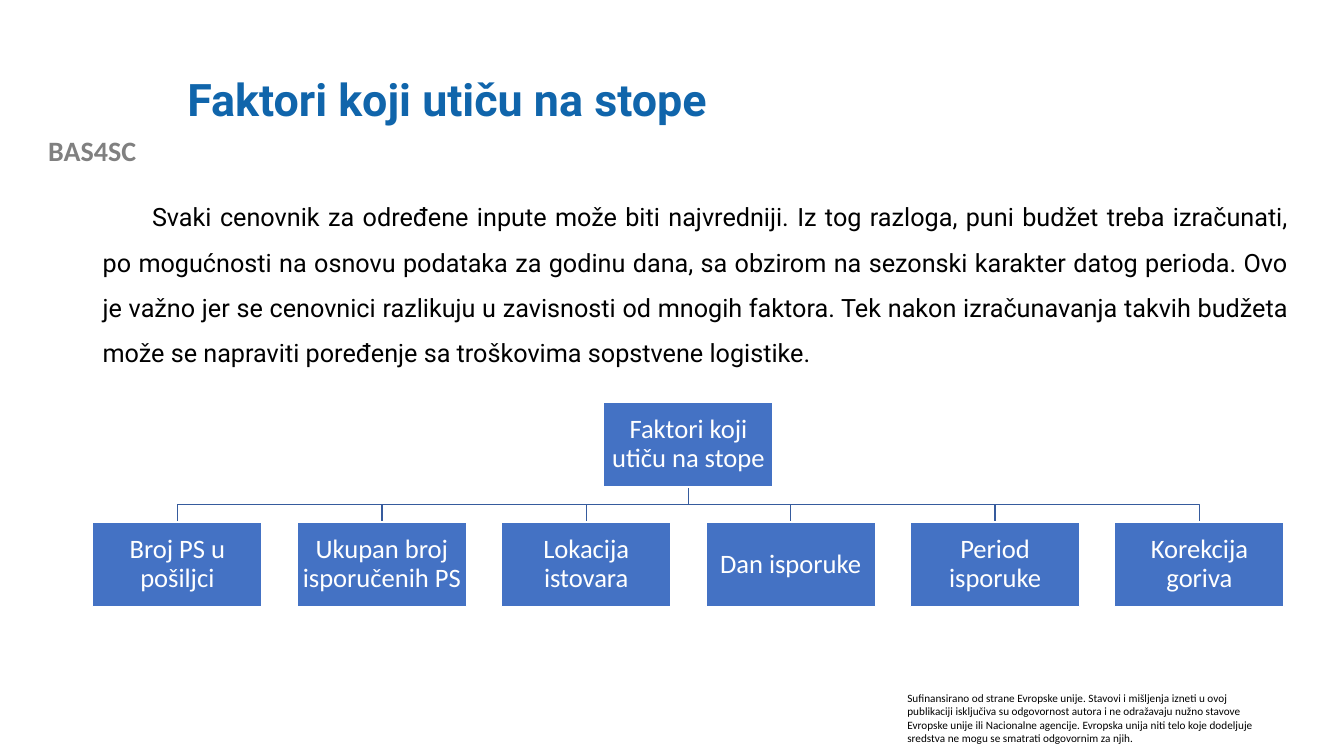
from pptx import Presentation
from pptx import util as u
from pptx.dml.color import RGBColor
from pptx.enum import shapes, text

SLIDE_WIDTH, SLIDE_HEIGHT = u.Inches(13.33), u.Inches(7.5)
CHART_LEFT, CHART_TOP = 6.9, 53.2
COLUMN_STEP, ROW_STEP = 15.21, 15.87
BOX_WIDTH, BOX_HEIGHT = 12.6, 11.2

PROJECT = "BAS4SC"
TITLE = "Faktori koji utiču na stope"
EXPLANATION = (
    "Svaki cenovnik za određene inpute može biti najvredniji. Iz tog razloga, "
    "puni budžet treba izračunati, po mogućnosti na osnovu podataka za godinu dana, "
    "sa obzirom na sezonski karakter datog perioda. Ovo je važno jer se cenovnici "
    "razlikuju u zavisnosti od mnogih faktora. Tek nakon izračunavanja takvih budžeta "
    "može se napraviti poređenje sa troškovima sopstvene logistike."
)
DISCLAIMER = (
    "Sufinansirano od strane Evropske unije. Stavovi i mišljenja izneti u ovoj "
    "publikaciji isključiva su odgovornost autora i ne odražavaju nužno stavove "
    "Evropske unije ili Nacionalne agencije. Evropska unija niti telo koje dodeljuje "
    "sredstva ne mogu se smatrati odgovornim za njih."
)
FACTORS = [
    "Broj PS u pošiljci",
    "Ukupan broj isporučenih PS",
    "Lokacija istovara",
    "Dan isporuke",
    "Period isporuke",
    "Korekcija goriva",
]


def color(hex_code):
    """Turn a hex string into a colour."""
    return RGBColor.from_string(hex_code)


def across(percent):
    """Give a share of the slide's width."""
    return u.Emu(round(SLIDE_WIDTH * percent / 100))


def down(percent):
    """Give a share of the slide's height."""
    return u.Emu(round(SLIDE_HEIGHT * percent / 100))


def area(left, top, width, height):
    """Turn shares of the slide into a position and size."""
    return across(left), down(top), across(width), down(height)


def write(frame, wording, size, ink, font="Calibri", bold=False, align=text.PP_ALIGN.LEFT,
          anchor=text.MSO_ANCHOR.TOP, spacing=1.0):
    """Fill a text frame with one paragraph and return it."""
    frame.word_wrap = True
    frame.vertical_anchor = anchor
    paragraph = frame.paragraphs[0]
    paragraph.alignment = align
    paragraph.line_spacing = spacing
    run = paragraph.add_run()
    run.text = wording
    run.font.name, run.font.size, run.font.bold = font, u.Pt(size), bold
    run.font.color.rgb = color(ink)
    return paragraph


def add_label(slide, place, wording, size, ink, **style):
    """Add a text box and return its paragraph."""
    label = slide.shapes.add_textbox(*area(*place))
    return write(label.text_frame, wording, size, ink, **style)


def cell(column, row):
    """Give the left and top shares of a chart box."""
    return CHART_LEFT + column * COLUMN_STEP, CHART_TOP + row * ROW_STEP


def add_factor(slide, wording, column, row):
    """Add one box of the hierarchy."""
    box = slide.shapes.add_shape(
        shapes.MSO_SHAPE.RECTANGLE, *area(*cell(column, row), BOX_WIDTH, BOX_HEIGHT))
    box.shadow.inherit = False
    box.fill.solid()
    box.fill.fore_color.rgb = color("4472C4")
    box.line.color.rgb = color("FFFFFF")
    box.line.width = u.Pt(1)
    frame = box.text_frame
    frame.margin_left = frame.margin_right = u.Inches(0.01)
    frame.margin_top = frame.margin_bottom = u.Inches(0.01)
    write(frame, wording, 19, "FFFFFF", align=text.PP_ALIGN.CENTER,
          anchor=text.MSO_ANCHOR.MIDDLE, spacing=0.9)


def add_branch(slide, parent_column, child_column):
    """Add the elbow line from the top box to a box in the row below."""
    parent_left, parent_top = cell(parent_column, 0)
    child_left, child_top = cell(child_column, 1)
    start_x, end_x = (across(left + BOX_WIDTH / 2) for left in (parent_left, child_left))
    start_y, end_y = down(parent_top + BOX_HEIGHT), down(child_top)
    bend_y = (start_y + end_y) // 2
    builder = slide.shapes.build_freeform(start_x, start_y)
    builder.add_line_segments([(start_x, bend_y), (end_x, bend_y), (end_x, end_y)], close=False)
    branch = builder.convert_to_shape()
    branch.shadow.inherit = False
    branch.fill.background()
    branch.line.color.rgb = color("365B9D")
    branch.line.width = u.Pt(1)


def add_hierarchy(slide, root, factors):
    """Add the root box above the evenly spaced row of factors."""
    root_column = (len(factors) - 1) / 2
    for column in range(len(factors)):
        add_branch(slide, root_column, column)
    add_factor(slide, root, root_column, 0)
    for column, factor in enumerate(factors):
        add_factor(slide, factor, column, 1)


def main():
    """Build the slide and save it."""
    deck = Presentation()
    deck.slide_width, deck.slide_height = SLIDE_WIDTH, SLIDE_HEIGHT
    slide = deck.slides.add_slide(deck.slide_layouts[6])
    add_label(slide, (0, 17.07, 13.73, 5.87), PROJECT, 20, "808080",
              bold=True, align=text.PP_ALIGN.CENTER)
    add_label(slide, (66.77, 90.8, 27.76, 8.53), DISCLAIMER, 8, "000000")
    add_label(slide, (13.2, 5.33, 79.97, 16.27), TITLE, 32, "1065AB", font="Roboto",
              bold=True, anchor=text.MSO_ANCHOR.MIDDLE, spacing=0.9)
    explanation = add_label(slide, (6.9, 24, 89.72, 25.6), EXPLANATION, 18, "000000",
                            font="Roboto", align=text.PP_ALIGN.JUSTIFY, spacing=1.5)
    explanation.space_after = u.Pt(6)
    explanation._p.get_or_add_pPr().set("indent", str(u.Inches(0.49)))
    add_hierarchy(slide, TITLE, FACTORS)
    deck.save("out.pptx")


if __name__ == "__main__":
    main()
